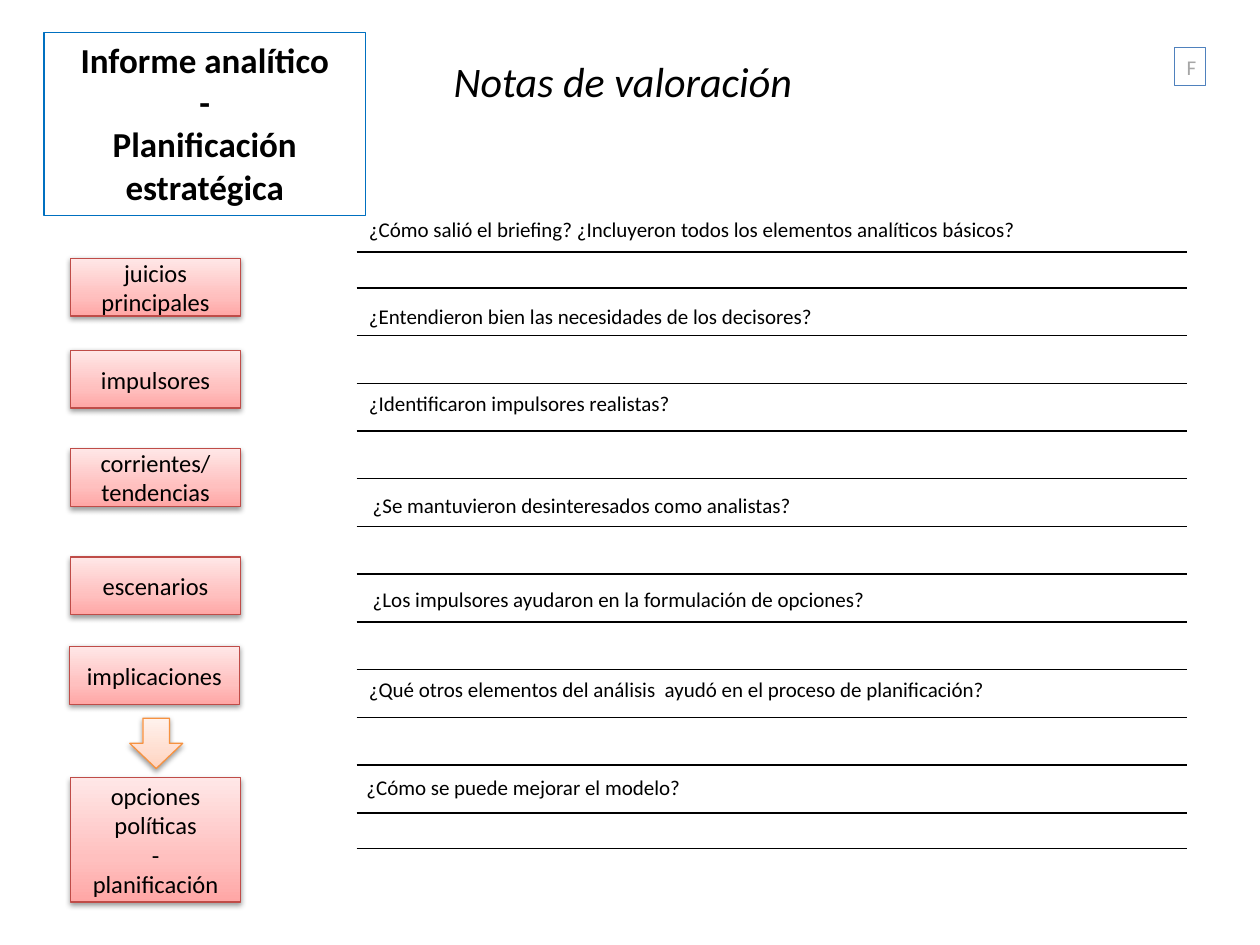
from copy import deepcopy

from pptx import Presentation
from pptx.dml.color import RGBColor
from pptx.enum.shapes import MSO_SHAPE as Shape
from pptx.enum.text import MSO_ANCHOR as Anchor, PP_ALIGN as Align
from pptx.oxml import parse_xml
from pptx.oxml.ns import nsdecls, qn
from pptx.util import Inches, Pt

FONT = "Calibri"
BLACK = RGBColor(0, 0, 0)
GRAY = RGBColor(0xA6, 0xA6, 0xA6)
BLUE = RGBColor(0x00, 0x70, 0xC0)
STEEL = RGBColor(0x4F, 0x81, 0xBD)
RED = RGBColor(0xBF, 0x4C, 0x48)
ORANGE = RGBColor(0xF6, 0x92, 0x40)
PINKS = [RGBColor(0xFF, 0xA6, 0xA5), RGBColor(0xFF, 0xC0, 0xBF), RGBColor(0xFF, 0xE7, 0xE7)]
PEACHES = [RGBColor(0xFF, 0xD2, 0xBD), RGBColor(0xFF, 0xDE, 0xD0), RGBColor(0xFF, 0xF2, 0xED)]
STOPS = [0, 0.35, 1]

# Stages of the analysis: text, left, top
STAGES = [
    ("juicios principales", 0.56, 2.05),
    ("impulsores", 0.56, 2.78),
    ("corrientes/ tendencias", 0.56, 3.56),
    ("escenarios", 0.56, 4.42),
    ("implicaciones", 0.55, 5.13),
]
# Assessment questions: text, left, top
QUESTIONS = [
    ("¿Cómo salió el briefing? ¿Incluyeron todos los elementos analíticos básicos?", 2.83, 1.67),
    ("¿Entendieron bien las necesidades de los decisores?", 2.83, 2.36),
    ("¿Identificaron impulsores realistas?", 2.83, 3.05),
    ("¿Se mantuvieron desinteresados como analistas?", 2.86, 3.86),
    ("¿Los impulsores ayudaron en la formulación de opciones?", 2.86, 4.61),
    ("¿Qué otros elementos del análisis  ayudó en el proceso de planificación?", 2.83, 5.32),
    ("¿Cómo se puede mejorar el modelo?", 2.81, 6.1),
]


def write(shape, text, size, color=BLACK, align=Align.LEFT, anchor=Anchor.TOP,
          bold=False, italic=False):
    frame = shape.text_frame
    frame.word_wrap = True
    frame.vertical_anchor = anchor
    frame.text = text
    for para in frame.paragraphs:
        para.alignment = align
        for span in para.runs:
            font = span.font
            font.name, font.size, font.color.rgb = FONT, Pt(size), color
            font.bold, font.italic = bold, italic


def add_outlined_box(page, box, text, size, line, color=BLACK, bold=False):
    shape = page.shapes.add_shape(Shape.RECTANGLE, *map(Inches, box))
    shape.shadow.inherit = False
    shape.fill.background()
    shape.line.color.rgb = line
    shape.line.width = Pt(0.75)
    write(shape, text, size, color, Align.CENTER, bold=bold)


def add_glossy_shape(shapes, kind, box, colors, line):
    """Add a shape with a three-stop gradient and a soft shadow."""
    shape = shapes.add_shape(kind, *map(Inches, box))
    shape.line.color.rgb = line
    shape.line.width = Pt(0.75)
    shape.fill.gradient()
    shape.fill.gradient_angle = 90
    properties = shape._element.spPr
    stop_list = properties.find(qn("a:gradFill")).find(qn("a:gsLst"))
    stop_list.append(deepcopy(stop_list[0]))
    for stop, position, color in zip(shape.fill.gradient_stops, STOPS, colors):
        stop.position = position
        stop.color.rgb = color
    properties.append(parse_xml(
        f'<a:effectLst {nsdecls("a")}><a:outerShdw blurRad="{Pt(3.1)}" dist="{Pt(1.6)}" '
        'dir="5400000" rotWithShape="0"><a:srgbClr val="000000"><a:alpha val="38000"/>'
        '</a:srgbClr></a:outerShdw></a:effectLst>'))
    return shape


def add_stage(shapes, box, text):
    shape = add_glossy_shape(shapes, Shape.RECTANGLE, box, PINKS, RED)
    write(shape, text, 14, align=Align.CENTER, anchor=Anchor.MIDDLE)


def add_flow(page, left, width):
    # Grouped stages, then the arrow to the resulting options
    group = page.shapes.add_group_shape()
    for text, stage_left, top in STAGES:
        add_stage(group.shapes, (stage_left, top, width, 0.46), text)
    add_stage(page.shapes, (left, 6.17, width, 0.99), "opciones políticas\v-\vplanificación")
    add_glossy_shape(page.shapes, Shape.DOWN_ARROW, (1.03, 5.7, 0.42, 0.4), PEACHES, ORANGE)


def format_ruled_cell(cell):
    """Leave only the horizontal borders of an empty cell."""
    cell.fill.background()
    cell.text_frame.paragraphs[0]._p.get_or_add_endParaRPr().set("sz", "1000")
    solid = '<a:solidFill><a:srgbClr val="000000"/></a:solidFill>'
    borders = {"lnL": "<a:noFill/>", "lnR": "<a:noFill/>", "lnT": solid, "lnB": solid}
    for index, (side, paint) in enumerate(borders.items()):
        cell._tc.get_or_add_tcPr().insert(index, parse_xml(
            f'<a:{side} {nsdecls("a")} w="{Pt(1)}">{paint}</a:{side}>'))


def add_ruled_lines(page, box):
    row_count, end_height = 13, 0.285
    table = page.shapes.add_table(row_count, 1, *map(Inches, box)).table
    table.first_row = table.horz_banding = False
    inner_height = (box[3] - 2 * end_height) / (row_count - 2)
    for index, row in enumerate(table.rows):
        at_end = index in (0, row_count - 1)
        row.height = Inches(end_height if at_end else inner_height)
        format_ruled_cell(row.cells[0])


def add_questions(page, width, height):
    for text, left, top in QUESTIONS:
        box = page.shapes.add_textbox(*map(Inches, (left, top, width, height)))
        write(box, text, 12)


def set_title(page, box, text):
    title = page.shapes.title
    title.left, title.top, title.width, title.height = map(Inches, box)
    write(title, text, 24, italic=True)


def main():
    deck = Presentation()
    deck.slide_width, deck.slide_height = Inches(10), Inches(7.5)
    page = deck.slides.add_slide(deck.slide_layouts.get_by_name("Title Only"))

    # Header
    add_outlined_box(page, (0.35, 0.26, 2.55, 1.45),
                     "Informe analítico\v-\vPlanificación estratégica", 20, BLUE, bold=True)
    set_title(page, (3.5, 0.39, 4, 0.74), "Notas de valoración")
    add_outlined_box(page, (9.32, 0.38, 0.25, 0.3), "F", 12, STEEL, GRAY)

    # Ruled note area and the flow on its left
    add_ruled_lines(page, (2.83, 2, 6.59, 4.74))
    add_questions(page, 5.9, 0.3)
    add_flow(page, 0.56, 1.35)

    deck.save("out.pptx")


if __name__ == "__main__":
    main()
